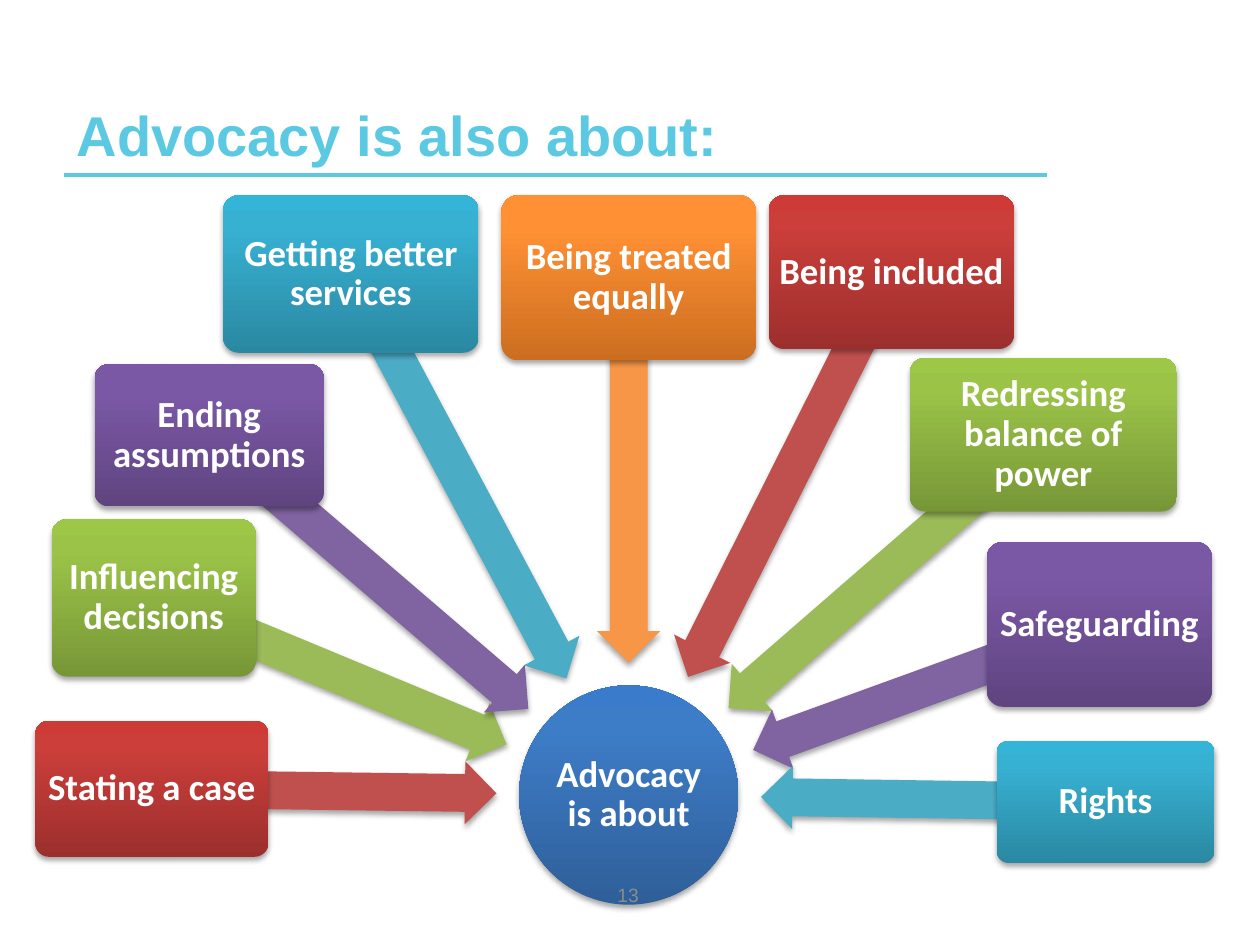
"""Build the slide that shows what advocacy is also about."""
import copy
import math

import pptx
import pptx.dml.color
import pptx.enum.shapes
import pptx.enum.text
import pptx.oxml
import pptx.util
from pptx.util import Inches

SHAPE = pptx.enum.shapes.MSO_SHAPE
ANCHOR = pptx.enum.text.MSO_ANCHOR
ALIGN = pptx.enum.text.PP_ALIGN
NS = "http://schemas.openxmlformats.org/drawingml/2006/main"
SHADOW = (
    f'<a:outerShdw xmlns:a="{NS}" blurRad="40000" dist="23000" dir="5400000" rotWithShape="0">'
    '<a:srgbClr val="000000"><a:alpha val="35000"/></a:srgbClr></a:outerShdw>'
)

SKY = "5CC9E3"
HUB = (4.99, 6.31)
HUB_SIZE = 1.74
TIP_GAP = 1.05
BLUE = ("2F5F99", "3D7CC7", "3A7CCB")
RED = ("9C2F2D", "CB3E3A", "CE3B37")
GREEN = ("779737", "9BC348", "9DC746")
PURPLE = ("5F4480", "7B58A6", "7C57A8")
TEAL = ("2A88A2", "37B1D2", "34B4D6")
ORANGE = ("CC6E20", "FF9034", "FF9136")
ARROW_COLOURS = {RED: "C0504D", GREEN: "9BBB59", PURPLE: "8064A2", TEAL: "4BACC6", ORANGE: "F79646"}
SPOKES = [
    ("Stating a case", RED, (0.28, 5.72, 1.85, 1.08)),
    ("Influencing decisions", GREEN, (0.41, 4.12, 1.62, 1.25)),
    ("Ending assumptions", PURPLE, (0.75, 2.89, 1.82, 1.13)),
    ("Getting better services", TEAL, (1.77, 1.55, 2.03, 1.25)),
    ("Being treated equally", ORANGE, (3.98, 1.55, 2.02, 1.31)),
    ("Being included", RED, (6.1, 1.55, 1.95, 1.22)),
    ("Redressing balance of power", GREEN, (7.22, 2.84, 2.12, 1.22)),
    ("Safeguarding", PURPLE, (7.83, 4.3, 1.79, 1.31)),
    ("Rights", TEAL, (7.91, 5.88, 1.73, 0.97)),
]


def rgb(value):
    return pptx.dml.color.RGBColor.from_string(value)


def write(sp, text, *, size, font, color, bold=False, align=ALIGN.CENTER,
          anchor=ANCHOR.MIDDLE, spacing=None, inset=None):
    tf = sp.text_frame
    tf.word_wrap = True
    tf.vertical_anchor = anchor
    if inset is not None:
        tf.margin_left = tf.margin_right = tf.margin_top = tf.margin_bottom = Inches(inset)
    p = tf.paragraphs[0]
    p.alignment = align
    if spacing:
        p.line_spacing = spacing
    r = p.add_run()
    r.text = text
    r.font.size = pptx.util.Pt(size)
    r.font.name = font
    r.font.bold = bold
    r.font.color.rgb = rgb(color)


class Deck:
    label = dict(size=21, font="Calibri", color="FFFFFF", bold=True, spacing=0.9)

    def __init__(self, prs):
        self.s = prs.slides.add_slide(prs.slide_layouts[6])

    def text(self, text, box, **style):
        sp = self.s.shapes.add_textbox(*map(Inches, box))
        write(sp, text, **style)

    def rule(self, x1, x2, y, color):
        line = self.s.shapes.add_connector(
            pptx.enum.shapes.MSO_CONNECTOR.STRAIGHT, Inches(x1), Inches(y), Inches(x2), Inches(y))
        line.line.color.rgb = rgb(color)
        line.line.width = pptx.util.Pt(2)
        line._element.spPr.append(pptx.oxml.parse_xml(f'<a:effectLst xmlns:a="{NS}"/>'))

    def shape(self, kind, box):
        sp = self.s.shapes.add_shape(kind, *map(Inches, box))
        sp.line.fill.background()
        sp.shadow.inherit = False
        sp._element.spPr.find(f"{{{NS}}}effectLst").append(pptx.oxml.parse_xml(SHADOW))
        return sp

    def node(self, kind, text, colors, box, inset):
        sp = self.shape(kind, box)
        if kind == SHAPE.ROUNDED_RECTANGLE:
            sp.adjustments[0] = 0.1
        sp.fill.gradient()
        sp.fill.gradient_angle = 90
        first = sp._element.spPr.find(f".//{{{NS}}}gs")
        first.addnext(copy.deepcopy(first))
        for stop, color, position in zip(sp.fill.gradient_stops, colors, (0, 0.8, 1)):
            stop.color.rgb = rgb(color)
            stop.position = position
        write(sp, text, inset=inset, **self.label)

    def arrow(self, tail, color):
        dx, dy = tail[0] - HUB[0], tail[1] - HUB[1]
        reach = math.hypot(dx, dy)
        length, thick = reach - TIP_GAP, 0.5
        middle = (reach + TIP_GAP) / 2 / reach
        x, y = HUB[0] + dx * middle, HUB[1] + dy * middle
        sp = self.shape(SHAPE.LEFT_ARROW, (x - length / 2, y - thick / 2, length, thick))
        sp.adjustments[0], sp.adjustments[1] = 0.6, 0.5
        sp.rotation = math.degrees(math.atan2(dy, dx)) % 360
        sp.fill.solid()
        sp.fill.fore_color.rgb = rgb(color)


def main():
    prs = pptx.Presentation()
    prs.slide_width, prs.slide_height = Inches(10), Inches(7.5)
    deck = Deck(prs)
    deck.rule(0.51, 8.31, 1.39, SKY)
    deck.text("Advocacy is also about:", (0.51, 0.29, 7.8, 1.09), size=32, font="Arial",
              color=SKY, bold=True, align=ALIGN.LEFT, anchor=ANCHOR.BOTTOM)
    hub_box = (HUB[0] - HUB_SIZE / 2, HUB[1] - HUB_SIZE / 2, HUB_SIZE, HUB_SIZE)
    deck.node(SHAPE.OVAL, "Advocacy is about", BLUE, hub_box, 0.01)
    for text, colors, box in SPOKES:
        x, y, w, h = box
        deck.arrow((x + w / 2, y + h / 2), ARROW_COLOURS[colors])
        deck.node(SHAPE.ROUNDED_RECTANGLE, text, colors, box, 0.04)
    deck.text("13", (3.82, 6.9, 2.33, 0.4), size=11, font="Arial", color="8C8C8C")
    prs.save("out.pptx")


if __name__ == "__main__":
    main()
